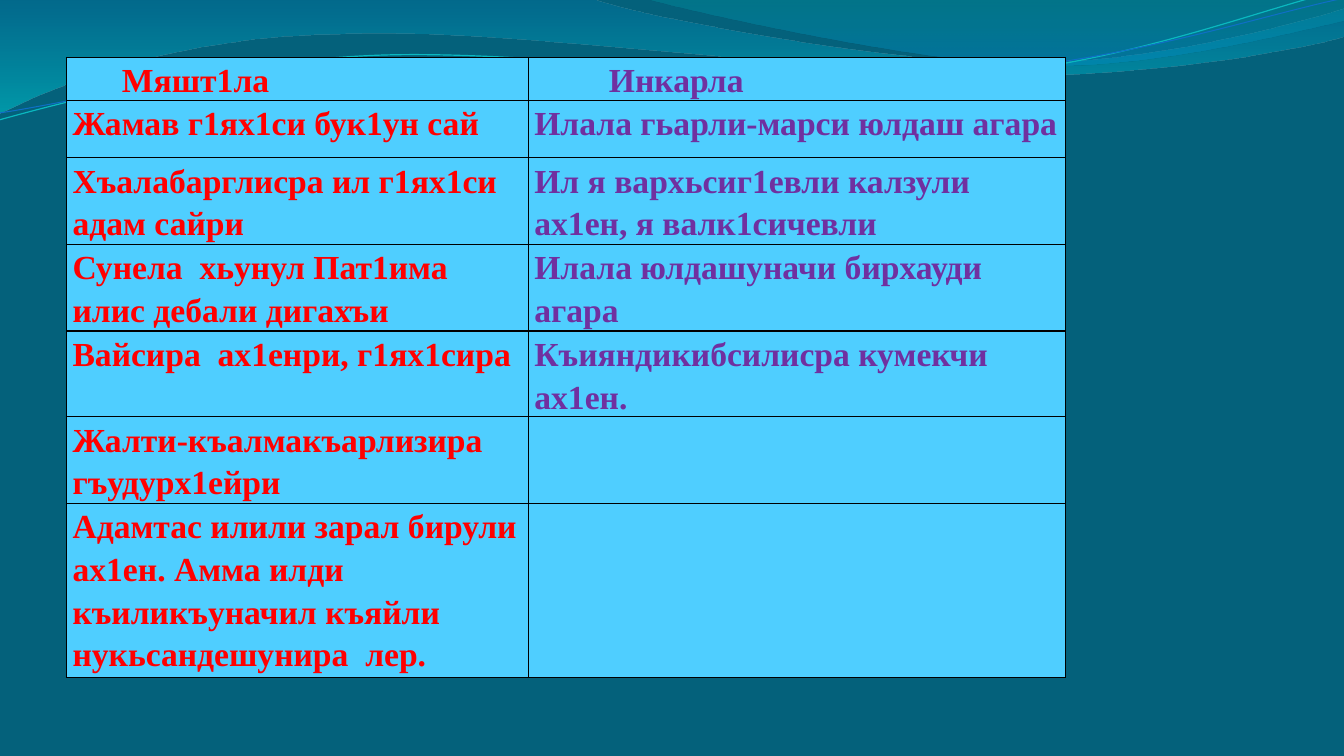
import pptx
import pptx.util
import pptx.dml.color
import pptx.oxml
import pptx.oxml.ns

HUES = {"back": "04617B", "cell": "4FCEFF", "edge": "000000", "left": "FF0000",
        "right": "7030A0", "blue": "0074A1", "teal": "00C6CF", "green": "00A1A9",
        "sky": "008BBF", "aqua": "0AB8BF", "deep": "0F6FC6"}
FONT = "Times New Roman"
ROWS = [
    ("Мяшт1ла", "Инкарла"),
    ("Жамав г1ях1си бук1ун сай", "Илала гьарли-марси юлдаш агара"),
    ("Хъалабарглисра ил г1ях1си адам сайри",
     "Ил я вархьсиг1евли калзули ах1ен, я валк1сичевли"),
    ("Сунела  хьунул Пат1има илис дебали дигахъи", "Илала юлдашуначи бирхауди агара"),
    ("Вайсира  ах1енри, г1ях1сира", "Къияндикибсилисра кумекчи ах1ен."),
    ("Жалти-къалмакъарлизира гъудурх1ейри", ""),
    ("Адамтас илили зарал бирули ах1ен. Амма илди къиликъуначил къяйли "
     "нукьсандешунира  лер.", ""),
]
LEFT, TOP = 0.66, 0.57
WIDTHS = [4.58, 5.33]
HEIGHTS = [0.42, 0.57, 0.86, 0.86, 0.85, 0.86, 1.73]
INDENTS = [0.49, 0.74]
WAVES = [
    ([(0, 0), (5.87, -0.01), (6.34, 0.17, 8.85, 0.63, 10.11, 0.63),
      (11.38, 0.63, 12.78, 0.26, 13.33, 0.09), (13.35, 0.36),
      (13.11, 0.44, 11.6, 0.76, 9.94, 0.75), (8.29, 0.75, 5.09, 0.28, 3.43, 0.34),
      (1.72, 0.36, 0.61, 0.83, -0.01, 1.13)],
     [(0, "blue", 45), (1, "teal", 55)]),
    ([(6.39, -0.01), (6.79, 0.11, 9.09, 0.62, 10.25, 0.65),
      (11.41, 0.69, 12.82, 0.32, 13.33, 0.21), (13.33, 0)],
     [(0, "green", 30), (0.8, "sky", 45)]),
]
CURVES = [
    ([(-0.01, 1.19), (0.64, 1.01, 2.11, 0.62, 3.69, 0.55),
      (5.27, 0.48, 7.9, 0.87, 9.5, 0.76), (11.1, 0.66, 12.52, 0.08, 13.31, -0.1)],
     "aqua", 0.85),
    ([(0, 1.12), (0.63, 1.03, 2.18, 0.66, 3.78, 0.59),
      (5.37, 0.53, 7.96, 0.82, 9.55, 0.72), (11.15, 0.62, 12.55, 0.14, 13.34, -0.02)],
     "deep", 0.75),
]
Inches, Pt, qn = pptx.util.Inches, pptx.util.Pt, pptx.oxml.ns.qn


def hue(name):
    return pptx.dml.color.RGBColor.from_string(HUES[name])


def outline(slide, route, close):
    dots = [(Inches(step[n]), Inches(step[n + 1]))
            for step in route for n in range(0, len(step), 2)]
    pen = slide.shapes.build_freeform(*dots[0], scale=1.0)
    pen.add_line_segments(dots[1:], close=close)
    shape = pen.convert_to_shape()
    shape.shadow.inherit = False
    legs = iter(list(shape._element.spPr.iter(qn("a:lnTo"))))
    for step in route[1:]:
        leg = next(legs)
        if len(step) == 6:
            leg.tag = qn("a:cubicBezTo")
            for extra in (next(legs), next(legs)):
                leg.append(extra[0])
                extra.getparent().remove(extra)
    return shape


def add_wave(slide, route, stops):
    shape = outline(slide, route, True)
    shape.line.fill.background()
    shape.fill.gradient()
    shape.fill.gradient_angle = 270
    for stop, (place, name, _) in zip(shape.fill.gradient_stops, stops):
        stop.position = place
        stop.color.rgb = hue(name)
    tints = shape._element.spPr.iter(qn("a:srgbClr"))
    for tint, (_, _, alpha) in zip(list(tints), stops):
        tint.append(pptx.oxml.parse_xml(
            f'<a:alpha {pptx.oxml.ns.nsdecls("a")} val="{alpha * 1000}"/>'))


def add_curve(slide, route, name, width):
    shape = outline(slide, route, False)
    shape.fill.background()
    shape.line.color.rgb = hue(name)
    shape.line.width = Pt(width)


def frame(cell):
    props = cell._tc.get_or_add_tcPr()
    for spot, side in enumerate(("lnL", "lnR", "lnT", "lnB")):
        props.insert(spot, pptx.oxml.parse_xml(
            f'<a:{side} {pptx.oxml.ns.nsdecls("a")} w="12700"><a:solidFill>'
            f'<a:srgbClr val="{HUES["edge"]}"/></a:solidFill></a:{side}>'))


def fill_cell(cell, text, name, indent):
    cell.fill.solid()
    cell.fill.fore_color.rgb = hue("cell")
    cell.margin_left = cell.margin_right = Inches(0.06)
    cell.margin_top = cell.margin_bottom = 0
    frame(cell)
    if not text:
        return
    para = cell.text_frame.paragraphs[0]
    para.line_spacing = 1.15
    if indent:
        props = para._p.get_or_add_pPr()
        props.set("marL", str(Inches(indent)))
        props.set("indent", "0")
    run = para.add_run()
    run.text = text
    run.font.name, run.font.size, run.font.bold = FONT, Pt(24), True
    run.font.color.rgb = hue(name)


def add_grid(slide):
    grid = slide.shapes.add_table(
        len(ROWS), len(WIDTHS), Inches(LEFT), Inches(TOP),
        Inches(sum(WIDTHS)), Inches(sum(HEIGHTS))).table
    for col, width in zip(grid.columns, WIDTHS):
        col.width = Inches(width)
    for r, (height, texts) in enumerate(zip(HEIGHTS, ROWS)):
        grid.rows[r].height = Inches(height)
        for c, (text, name) in enumerate(zip(texts, ("left", "right"))):
            fill_cell(grid.cell(r, c), text, name, 0 if r else INDENTS[c])


def main():
    """Build the two-column table slide over a wave backdrop."""
    deck = pptx.Presentation()
    deck.slide_width, deck.slide_height = Inches(13.33), Inches(7.5)
    slide = deck.slides.add_slide(deck.slide_layouts[6])
    slide.background.fill.solid()
    slide.background.fill.fore_color.rgb = hue("back")
    for wave in WAVES:
        add_wave(slide, *wave)
    for curve in CURVES:
        add_curve(slide, *curve)
    add_grid(slide)
    deck.save("out.pptx")


if __name__ == "__main__":
    main()
